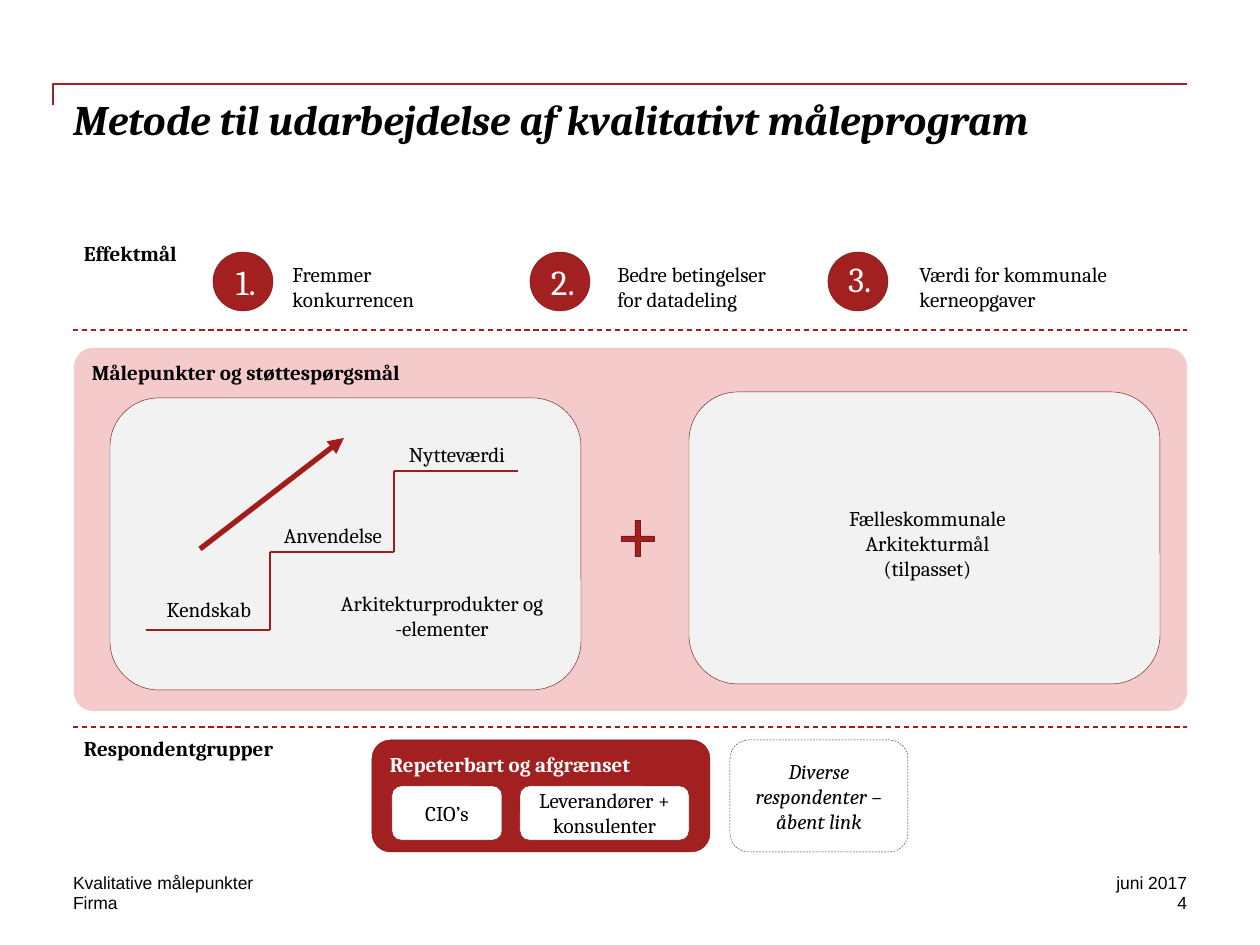
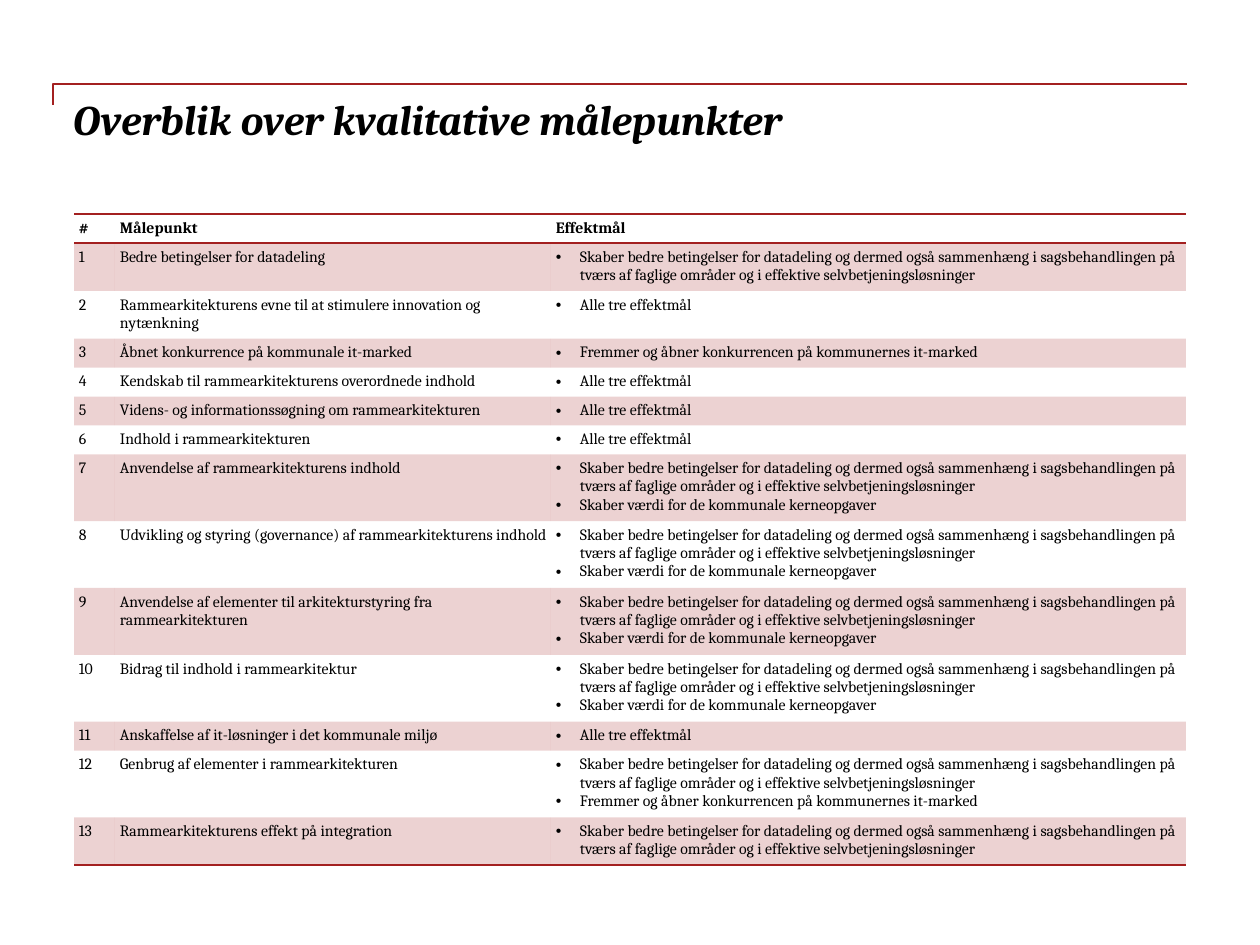
from typing import NamedTuple, Optional

from lxml.etree import SubElement
from pptx import Presentation
from pptx.dml.color import RGBColor
from pptx.enum.dml import MSO_LINE
from pptx.enum.shapes import MSO_CONNECTOR, MSO_SHAPE
from pptx.enum.text import MSO_ANCHOR, PP_ALIGN
from pptx.oxml.ns import qn
from pptx.util import Emu, Pt

PX = 914400 / 126
RED = RGBColor(0xA3, 0x20, 0x20)
LINE_RED = RGBColor(0xA3, 0x1C, 0x1C)
DARK_RED = RGBColor(0x79, 0x18, 0x18)
PINK = RGBColor(0xF5, 0xCA, 0xCA)
GREY = RGBColor(0xF2, 0xF2, 0xF2)
WHITE = RGBColor(0xFF, 0xFF, 0xFF)
BLACK = RGBColor(0, 0, 0)
SERIF = "Cambria"
SANS = "Arial"
LEFT, RIGHT = 73, 1187
PLAIN_TABLE = "{2D5ABB26-0587-4C30-8999-92F81FD0307C}"


class Box(NamedTuple):
    left: int
    top: int
    width: int
    height: int


class Goal(NamedTuple):
    number: str
    caption: str
    circle_left: int
    number_left: int
    number_top: int
    caption_left: int
    caption_width: int


class Step(NamedTuple):
    label: str
    level: int
    label_top: int


class Measure(NamedTuple):
    name: str
    effects: tuple[str, ...]
    lines: int


GOALS = (
    Goal("1.", "Fremmer konkurrencen", 213, 236, 260, 280, 199),
    Goal("2.", "Bedre betingelser for datadeling", 530, 551, 260, 605, 199),
    Goal("3.", "Værdi for kommunale kerneopgaver", 828, 848, 257, 907, 239),
)
STEPS = (
    Step("Kendskab", 630, 597),
    Step("Anvendelse", 552, 523),
    Step("Nytteværdi", 471, 442),
)
RESPONDENTS = (
    ("CIO’s", Box(392, 786, 110, 54)),
    ("Leverandører + konsulenter", Box(520, 786, 169, 54)),
)

SHARING = (
    "Skaber bedre betingelser for datadeling og dermed også sammenhæng i "
    "sagsbehandlingen på tværs af faglige områder og i effektive "
    "selvbetjeningsløsninger"
)
COMPETITION = "Fremmer og åbner konkurrencen på kommunernes it-marked"
CORE_VALUE = "Skaber værdi for de kommunale kerneopgaver"
ALL_GOALS = "Alle tre effektmål"
MEASURES = (
    Measure("Bedre betingelser for datadeling", (SHARING,), 2),
    Measure("Rammearkitekturens evne til at stimulere innovation og nytænkning",
            (ALL_GOALS,), 2),
    Measure("Åbnet konkurrence på kommunale it-marked", (COMPETITION,), 1),
    Measure("Kendskab til rammearkitekturens overordnede indhold", (ALL_GOALS,), 1),
    Measure("Videns- og informationssøgning om rammearkitekturen", (ALL_GOALS,), 1),
    Measure("Indhold i rammearkitekturen", (ALL_GOALS,), 1),
    Measure("Anvendelse af rammearkitekturens indhold", (SHARING, CORE_VALUE), 3),
    Measure("Udvikling og styring (governance) af rammearkitekturens indhold",
            (SHARING, CORE_VALUE), 3),
    Measure("Anvendelse af elementer til arkitekturstyring fra rammearkitekturen",
            (SHARING, CORE_VALUE), 3),
    Measure("Bidrag til indhold i rammearkitektur", (SHARING, CORE_VALUE), 3),
    Measure("Anskaffelse af it-løsninger i det kommunale miljø", (ALL_GOALS,), 1),
    Measure("Genbrug af elementer i rammearkitekturen", (SHARING, COMPETITION), 3),
    Measure("Rammearkitekturens effekt på integration", (SHARING,), 2),
)
ROW_HEIGHTS = {1: 28, 2: 47, 3: 65}
COLUMN_WIDTHS = (41, 436, 635)


def emu(px: int) -> Emu:
    return Emu(round(px * PX))


def place(box: Box) -> list[Emu]:
    return [emu(length) for length in box]


def write(frame, *paragraphs: str, size: int = 12, font: str = SERIF,
          color: RGBColor = BLACK, bold: bool = False, italic: bool = False,
          align: PP_ALIGN = PP_ALIGN.LEFT, bullet: bool = False) -> None:
    frame.word_wrap = True
    for index, text in enumerate(paragraphs):
        paragraph = frame.add_paragraph() if index else frame.paragraphs[0]
        paragraph.alignment = align
        if bullet:
            properties = paragraph._p.get_or_add_pPr()
            properties.set("marL", str(emu(24)))
            properties.set("indent", str(emu(-24)))
            SubElement(properties, qn("a:buFont"), typeface=SANS)
            SubElement(properties, qn("a:buChar"), char="•")
        run = paragraph.add_run()
        run.text = text
        run.font.size = Pt(size)
        run.font.name = font
        run.font.color.rgb = color
        run.font.bold = bold
        run.font.italic = italic


def add_text(slide, box: Box, text: str, inset: bool = False,
             anchor: MSO_ANCHOR = MSO_ANCHOR.TOP, **style) -> None:
    frame = slide.shapes.add_textbox(*place(box)).text_frame
    frame.vertical_anchor = anchor
    if not inset:
        frame.margin_left = frame.margin_top = 0
        frame.margin_right = frame.margin_bottom = 0
    write(frame, text, **style)


def add_block(slide, kind: MSO_SHAPE, box: Box, fill: RGBColor,
              outline: Optional[RGBColor] = DARK_RED, dashed: bool = False,
              adjustment: Optional[float] = None, text: str = "",
              anchor: MSO_ANCHOR = MSO_ANCHOR.MIDDLE, **style) -> None:
    block = slide.shapes.add_shape(kind, *place(box))
    block.shadow.inherit = False
    block.fill.solid()
    block.fill.fore_color.rgb = fill
    if outline is None:
        block.line.fill.background()
    else:
        block.line.color.rgb = outline
        block.line.width = Pt(0.25)
    if dashed:
        block.line.dash_style = MSO_LINE.DASH
    if adjustment is not None:
        block.adjustments[0] = adjustment
    if text:
        block.text_frame.vertical_anchor = anchor
        write(block.text_frame, text, **style)


def add_line(slide, start: tuple[int, int], end: tuple[int, int],
             width: float = 0.75, dashed: bool = False, arrow: bool = False) -> None:
    line = slide.shapes.add_connector(
        MSO_CONNECTOR.STRAIGHT, *map(emu, start), *map(emu, end))
    line.line.color.rgb = LINE_RED
    line.line.width = Pt(width)
    if dashed:
        line.line.dash_style = MSO_LINE.DASH
    if arrow:
        SubElement(line.line._get_or_add_ln(), qn("a:tailEnd"), type="triangle")
    SubElement(line._element.spPr, qn("a:effectLst"))


def add_titled_slide(deck, title: str):
    slide = deck.slides.add_slide(deck.slide_layouts[6])
    builder = slide.shapes.build_freeform(53, 105, scale=PX)
    builder.add_line_segments([(53, 84), (RIGHT, 84)], close=False)
    corner_rule = builder.convert_to_shape()
    corner_rule.shadow.inherit = False
    corner_rule.fill.background()
    corner_rule.line.color.rgb = RED
    corner_rule.line.width = Pt(1)
    add_text(slide, Box(LEFT, 94, 1113, 126), title, size=24, bold=True, italic=True)
    return slide


def add_footer(slide) -> None:
    for left, width, top, text, align in (
        (LEFT, 725, 872, "Kvalitative målepunkter", PP_ALIGN.LEFT),
        (LEFT, 357, 892, "Firma", PP_ALIGN.LEFT),
        (977, 210, 872, "juni 2017", PP_ALIGN.RIGHT),
        (977, 210, 892, "4", PP_ALIGN.RIGHT),
    ):
        add_text(slide, Box(left, top, width, 21), text,
                 size=10, font=SANS, align=align)


def add_goals(slide) -> None:
    add_text(slide, Box(84, 241, 198, 49), "Effektmål", bold=True)
    for goal in GOALS:
        add_block(slide, MSO_SHAPE.OVAL, Box(goal.circle_left, 252, 60, 59), RED)
        add_text(slide, Box(goal.number_left, goal.number_top, 30, 18),
                 goal.number, size=20, color=WHITE)
        add_text(slide, Box(goal.caption_left, 255, goal.caption_width, 63),
                 goal.caption, inset=True)


def add_staircase(slide) -> None:
    tread, first_left = 124, 146
    for index, step in enumerate(STEPS):
        left = first_left + index * tread
        add_line(slide, (left, step.level), (left + tread, step.level))
        if index:
            add_line(slide, (left, STEPS[index - 1].level), (left, step.level))
        add_text(slide, Box(left + 8, step.label_top, 110, 30), step.label,
                 align=PP_ALIGN.CENTER)
    add_line(slide, (200, 549), (344, 438), width=3, arrow=True)


def add_measuring_panel(slide) -> None:
    rounded = MSO_SHAPE.ROUNDED_RECTANGLE
    add_block(slide, rounded, Box(74, 348, 1113, 363), PINK, outline=None,
              adjustment=0.052, text="Målepunkter og støttespørgsmål",
              anchor=MSO_ANCHOR.TOP, bold=True)
    for left, top in ((110, 398), (689, 392)):
        add_block(slide, rounded, Box(left, top, 471, 292), GREY)
    add_text(slide, Box(828, 499, 199, 89), "Fælleskommunale Arkitekturmål (tilpasset)",
             inset=True, align=PP_ALIGN.CENTER)
    add_block(slide, MSO_SHAPE.MATH_PLUS, Box(615, 514, 45, 49), RED, adjustment=0.112)
    add_staircase(slide)
    add_text(slide, Box(333, 590, 218, 54), "Arkitekturprodukter og -elementer",
             align=PP_ALIGN.CENTER)


def add_respondents(slide) -> None:
    rounded = MSO_SHAPE.ROUNDED_RECTANGLE
    add_text(slide, Box(84, 736, 248, 49), "Respondentgrupper", bold=True)
    add_block(slide, rounded, Box(372, 740, 338, 112), RED,
              text="Repeterbart og afgrænset", anchor=MSO_ANCHOR.TOP,
              color=WHITE, bold=True)
    add_block(slide, rounded, Box(730, 740, 178, 112), WHITE, dashed=True,
              text="Diverse respondenter – åbent link", italic=True,
              align=PP_ALIGN.CENTER)
    for group, box in RESPONDENTS:
        add_block(slide, rounded, box, WHITE, text=group, align=PP_ALIGN.CENTER)


def fill_cell(cell, *paragraphs: str, borders: tuple[str, ...] = (),
              shaded: bool = False, **style) -> None:
    cell.margin_left = cell.margin_right = emu(5)
    cell.margin_top = cell.margin_bottom = emu(5)
    properties = cell._tc.get_or_add_tcPr()
    for side in borders:
        border = SubElement(properties, qn(f"a:{side}"), w=str(Pt(1)))
        solid = SubElement(border, qn("a:solidFill"))
        SubElement(solid, qn("a:srgbClr"), val=str(RED))
    if shaded:
        cell.fill.solid()
        cell.fill.fore_color.rgb = RED
        tint = properties.find(qn("a:solidFill")).find(qn("a:srgbClr"))
        SubElement(tint, qn("a:alpha"), val="20000")
    else:
        cell.fill.background()
    write(cell.text_frame, *paragraphs, size=9, **style)


def add_measures_table(slide) -> None:
    heights = [ROW_HEIGHTS[1]] + [ROW_HEIGHTS[m.lines] for m in MEASURES]
    box = Box(74, 214, sum(COLUMN_WIDTHS), sum(heights))
    table = slide.shapes.add_table(
        len(heights), len(COLUMN_WIDTHS), *place(box)).table
    table.first_row = table.horz_banding = False
    table._tbl.tblPr.find(qn("a:tableStyleId")).text = PLAIN_TABLE
    for column, width in zip(table.columns, COLUMN_WIDTHS):
        column.width = emu(width)
    for row, height in zip(table.rows, heights):
        row.height = emu(height)
    for column, heading in enumerate(("#", "Målepunkt", "Effektmål")):
        fill_cell(table.cell(0, column), heading, borders=("lnT", "lnB"), bold=True)
    for number, measure in enumerate(MEASURES, start=1):
        borders = ("lnB",) if number == len(MEASURES) else ()
        contents = ((str(number),), (measure.name,), measure.effects)
        for column, paragraphs in enumerate(contents):
            fill_cell(table.cell(number, column), *paragraphs, borders=borders,
                      shaded=number % 2 == 1, bullet=column == 2)


def main() -> None:
    deck = Presentation()
    deck.slide_width, deck.slide_height = emu(1260), emu(945)

    method = add_titled_slide(deck, "Metode til udarbejdelse af kvalitativt måleprogram")
    add_goals(method)
    add_measuring_panel(method)
    add_respondents(method)
    for divider in (330, 727):
        add_line(method, (LEFT, divider), (RIGHT, divider), dashed=True)
    add_footer(method)

    overview = add_titled_slide(deck, "Overblik over kvalitative målepunkter")
    add_measures_table(overview)

    deck.save("out.pptx")


if __name__ == "__main__":
    main()
